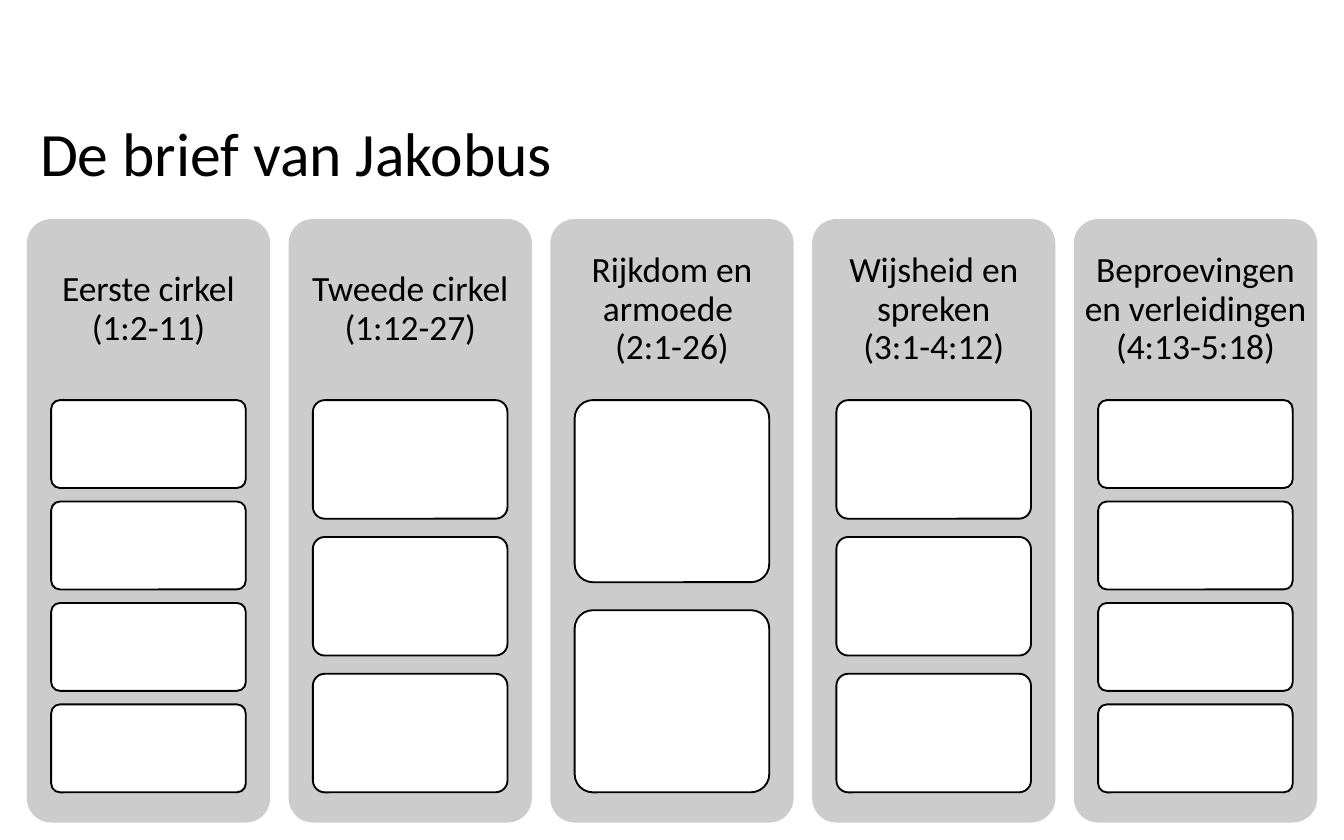
from dataclasses import dataclass

from pptx import Presentation
from pptx.dml.color import RGBColor
from pptx.enum.shapes import MSO_SHAPE
from pptx.enum.text import MSO_ANCHOR, PP_ALIGN
from pptx.util import Inches, Pt

ROUNDED = MSO_SHAPE.ROUNDED_RECTANGLE
MIDDLE = MSO_ANCHOR.MIDDLE
LEFT, CENTER = PP_ALIGN.LEFT, PP_ALIGN.CENTER

COLORS = {"panel": "CCCCCC", "card": "FFFFFF", "ink": "000000"}
FONT = "Calibri"
SLIDE_WIDTH, SLIDE_HEIGHT = 10, 6.25

# Column grid, in inches
GRID_LEFT, GRID_TOP = 0.2, 1.63
GRID_WIDTH, GRID_HEIGHT = SLIDE_WIDTH - 2 * GRID_LEFT, 4.49
PANEL_WIDTH = 1.81
HEADING_SHARE = 0.3   # of the panel height
CARDS_SHARE = 0.65    # of the panel height
CARD_SHARE = 0.8      # of the panel width
GAP_SHARE = 2 / 13    # of the card height


@dataclass(frozen=True)
class Frame:
    left: float
    top: float
    width: float
    height: float

    def lengths(self) -> tuple:
        return tuple(map(Inches, (self.left, self.top, self.width, self.height)))


@dataclass(frozen=True)
class Section:
    lines: tuple[str, ...]
    cards: int


SECTIONS = (
    Section(("Eerste cirkel", "(1:2-11)"), 4),
    Section(("Tweede cirkel", "(1:12-27)"), 3),
    Section(("Rijkdom en armoede ", "(2:1-26)"), 2),
    Section(("Wijsheid en spreken", "(3:1-4:12)"), 3),
    Section(("Beproevingen en verleidingen (4:13-5:18)",), 4),
)


def color(name: str) -> RGBColor:
    return RGBColor.from_string(COLORS[name])


def add_rounded(page, frame: Frame, fill: str, line: str | None = None) -> None:
    shape = page.shapes.add_shape(ROUNDED, *frame.lengths())
    shape.adjustments[0] = 0.1
    shape.shadow.inherit = False
    shape.fill.solid()
    shape.fill.fore_color.rgb = color(fill)
    if line:
        shape.line.color.rgb = color(line)
        shape.line.width = Pt(1)
    else:
        shape.line.fill.background()


def add_text(page, frame: Frame, lines: tuple[str, ...], size: float,
             align: PP_ALIGN, inset: float) -> None:
    """Write one paragraph, with a line break between the lines."""
    box = page.shapes.add_textbox(*frame.lengths()).text_frame
    box.word_wrap = True
    box.vertical_anchor = MIDDLE
    box.margin_left = box.margin_right = Inches(inset)
    para = box.paragraphs[0]
    para.alignment = align
    para.line_spacing = 0.9
    for index, line in enumerate(lines):
        if index:
            para.add_line_break()
        span = para.add_run()
        span.text = line
        span.font.name = FONT
        span.font.size = Pt(size)
        span.font.color.rgb = color("ink")


def add_section(page, section: Section, panel: Frame) -> None:
    add_rounded(page, panel, "panel")
    heading = Frame(panel.left, panel.top, panel.width, panel.height * HEADING_SHARE)
    add_text(page, heading, section.lines, 19, CENTER, 0.07)

    count = section.cards
    height = panel.height * CARDS_SHARE / (count + (count - 1) * GAP_SHARE)
    width = panel.width * CARD_SHARE
    left = panel.left + (panel.width - width) / 2
    first_top = heading.top + heading.height
    for row in range(count):
        top = first_top + row * height * (1 + GAP_SHARE)
        add_rounded(page, Frame(left, top, width, height), "card", "ink")


def main() -> None:
    deck = Presentation()
    deck.slide_width, deck.slide_height = Inches(SLIDE_WIDTH), Inches(SLIDE_HEIGHT)
    page = deck.slides.add_slide(deck.slide_layouts[6])

    pitch = (GRID_WIDTH - PANEL_WIDTH) / (len(SECTIONS) - 1)
    for column, section in enumerate(SECTIONS):
        panel = Frame(GRID_LEFT + column * pitch, GRID_TOP, PANEL_WIDTH, GRID_HEIGHT)
        add_section(page, section, panel)

    title = Frame(GRID_LEFT, 0.68, SLIDE_WIDTH * 0.93, 0.97)
    add_text(page, title, ("De brief van Jakobus",), 33, LEFT, 0.1)
    deck.save("out.pptx")


if __name__ == "__main__":
    main()
